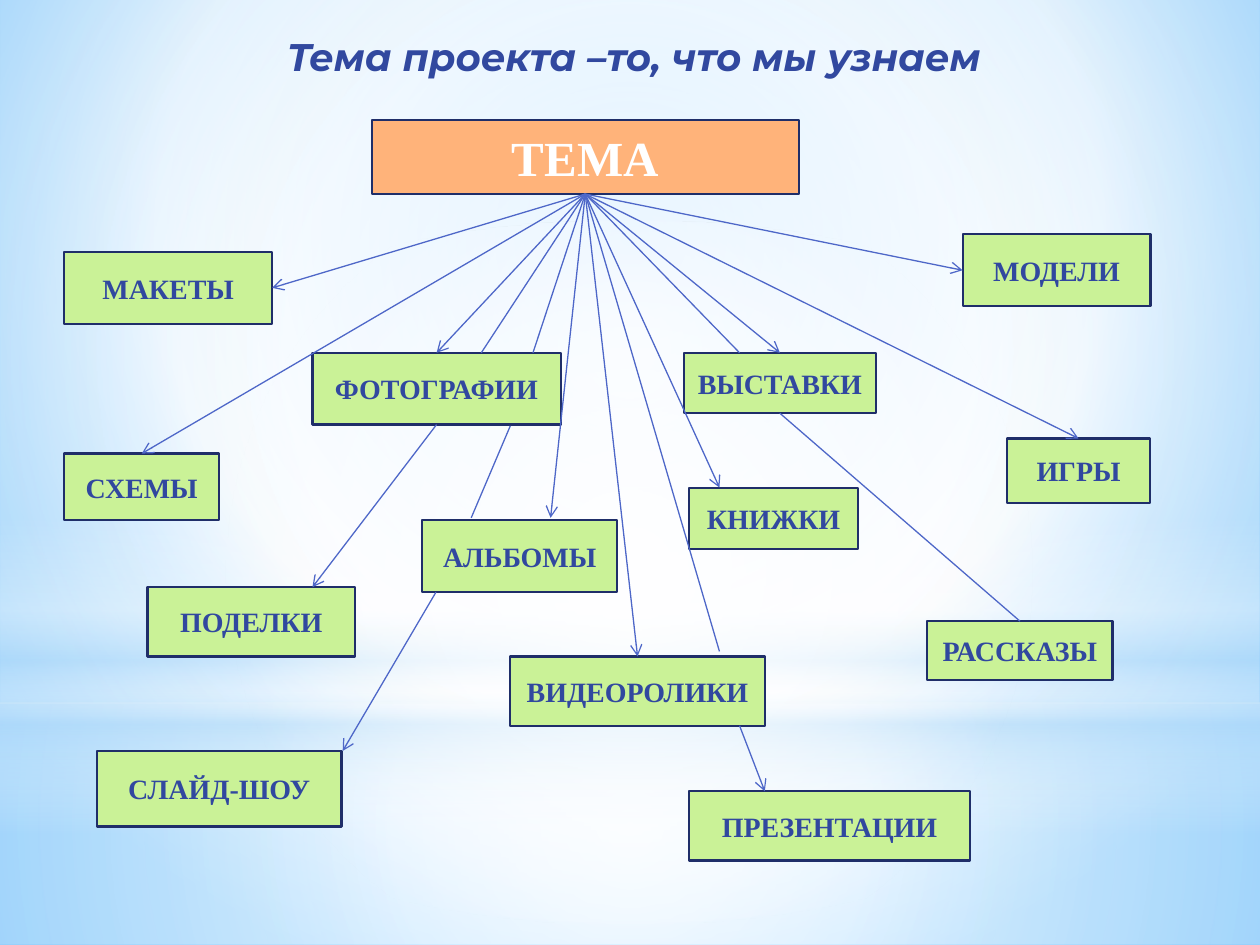
from lxml.etree import SubElement
from pptx import Presentation
from pptx.dml.color import RGBColor
from pptx.enum.shapes import MSO_CONNECTOR as Connector, MSO_SHAPE as Shape
from pptx.enum.text import MSO_ANCHOR as Anchor, PP_ALIGN as Align
from pptx.oxml.ns import qn
from pptx.util import Emu, Inches, Pt

WIDTH, HEIGHT = 10, 7.5
TOP, LEFT, BOTTOM, RIGHT = range(4)
BLUE, NAVY, LINE = "31489F", "1F2E69", "4E67C8"
ORANGE, GREEN, WHITE = "FFB37A", "CAF297", "FFFFFF"
SKY = "B4DCFA"
SERIF = "Times New Roman"
CENTER = (50, 50, 50, 50)

TITLE = "Тема проекта –то, что мы узнаем"
THEME = "ТЕМА"

# Gradient stops: position %, colour, opacity %
BACKGROUND = [(0, "9ED5FF", 100), (60, WHITE, 100), (100, "5BB9FF", 100)]
BACKDROP = [  # preset, left, top, width, height, stops, focus (None = vertical)
    (Shape.RECTANGLE, 0, 5.58, WIDTH, 1.92,
     [(0, WHITE, 91), (37, WHITE, 76), (100, SKY, 79)], CENTER),
    (Shape.RECTANGLE, 0, 0, WIDTH, 5.58,
     [(0, WHITE, 89), (48, WHITE, 62), (100, SKY, 79)], CENTER),
    (Shape.RECTANGLE, 0, 4.12, WIDTH, 2.5,
     [(0, WHITE, 0), (29, WHITE, 30), (45, SKY, 40),
      (55, WHITE, 26), (65, SKY, 60), (100, WHITE, 0)], None),
    (Shape.OVAL, 0, 1.75, WIDTH, 5.58, [(0, WHITE, 100), (56, WHITE, 0)], CENTER),
]

# Name: left, top, width, height
BOXES = {
    THEME: (2.95, 0.95, 3.39, 0.59),
    "МАКЕТЫ": (0.51, 2, 1.65, 0.57),
    "ПОДЕЛКИ": (1.17, 4.66, 1.65, 0.55),
    "ФОТОГРАФИИ": (2.48, 2.8, 1.97, 0.57),
    "СХЕМЫ": (0.51, 3.6, 1.23, 0.53),
    "АЛЬБОМЫ": (3.35, 4.13, 1.55, 0.57),
    "СЛАЙД-ШОУ": (0.77, 5.96, 1.94, 0.6),
    "ВЫСТАВКИ": (5.43, 2.8, 1.52, 0.48),
    "МОДЕЛИ": (7.64, 1.86, 1.49, 0.57),
    "ИГРЫ": (7.99, 3.48, 1.14, 0.51),
    "КНИЖКИ": (5.47, 3.87, 1.34, 0.49),
    "РАССКАЗЫ": (7.36, 4.93, 1.47, 0.47),
    "ВИДЕОРОЛИКИ": (4.05, 5.21, 2.02, 0.55),
    "ПРЕЗЕНТАЦИИ": (5.47, 6.28, 2.23, 0.55),
}

# An end is (box name, side) or a free point (x, y); then whether it has an arrowhead
HUB = (THEME, BOTTOM)
LINKS = [
    (HUB, ("ВЫСТАВКИ", TOP), True),
    (HUB, ("ФОТОГРАФИИ", TOP), True),
    (HUB, ("МОДЕЛИ", LEFT), True),
    (HUB, ("МАКЕТЫ", RIGHT), True),
    (HUB, (4.37, 4.11), True),
    (HUB, ("ВИДЕОРОЛИКИ", TOP), True),
    (HUB, (5.71, 3.87), True),
    (HUB, ("ИГРЫ", TOP), True),
    (HUB, (5.87, 2.8), False),
    (("ВЫСТАВКИ", BOTTOM), ("РАССКАЗЫ", TOP), False),
    (HUB, ("СХЕМЫ", TOP), True),
    (HUB, (3.82, 2.8), False),
    (("ФОТОГРАФИИ", BOTTOM), (2.48, 4.66), True),
    (HUB, (4.23, 2.8), False),
    ((4.05, 3.38), (3.74, 4.11), False),
    ((3.46, 4.7), (2.72, 5.96), True),
    (HUB, (5.71, 5.17), False),
    ((5.87, 5.76), (6.07, 6.28), True),
]


def color(value):
    return RGBColor.from_string(value)


def write(shape, text, *, size, font, fill, italic=False):
    frame = shape.text_frame
    frame.word_wrap = True
    paragraph = frame.paragraphs[0]
    paragraph.alignment = Align.CENTER
    run = paragraph.add_run()
    run.text = text
    run.font.size, run.font.name = Pt(size), font
    run.font.bold, run.font.italic = True, italic
    run.font.color.rgb = color(fill)
    return paragraph


def set_gradient(parent, stops, focus):
    """Swap the solid fill inside parent for a radial or vertical gradient."""
    solid = parent.find(qn("a:solidFill"))
    gradient = SubElement(parent, qn("a:gradFill"), rotWithShape="1")
    parent.replace(solid, gradient)
    stop_list = SubElement(gradient, qn("a:gsLst"))
    for position, value, opacity in stops:
        stop = SubElement(stop_list, qn("a:gs"), pos=str(position * 1000))
        tint = SubElement(stop, qn("a:srgbClr"), val=value)
        if opacity < 100:
            SubElement(tint, qn("a:alpha"), val=str(opacity * 1000))
    if focus:
        path = SubElement(gradient, qn("a:path"), path="circle")
        SubElement(path, qn("a:fillToRect"),
                   {side: str(share * 1000) for side, share in zip("ltrb", focus)})
    else:
        SubElement(gradient, qn("a:lin"), ang=str(90 * 60000), scaled="0")


def add_shape(slide, preset, left, top, width, height, fill, outline=None):
    shape = slide.shapes.add_shape(
        preset, Inches(left), Inches(top), Inches(width), Inches(height))
    shape.shadow.inherit = False
    shape.fill.solid()
    shape.fill.fore_color.rgb = color(fill)
    if outline:
        shape.line.color.rgb = color(outline)
        shape.line.width = Pt(1.25)
    else:
        shape.line.fill.background()
    return shape


def add_link(slide, boxes, start, end, arrow):
    def is_joined(place):
        return place[0] in boxes

    points = [(0, 0) if is_joined(place) else place for place in (start, end)]
    link = slide.shapes.add_connector(
        Connector.STRAIGHT, *(Inches(value) for point in points for value in point))
    if is_joined(start):
        link.begin_connect(boxes[start[0]], start[1])
    if is_joined(end):
        link.end_connect(boxes[end[0]], end[1])
    link.line.color.rgb = color(LINE)
    link.line.width = Pt(0.75)
    properties = link.element.spPr
    if arrow:
        SubElement(properties.find(qn("a:ln")), qn("a:tailEnd"), type="arrow")
    SubElement(properties, qn("a:effectLst"))


def main():
    presentation = Presentation()
    presentation.slide_width, presentation.slide_height = Inches(WIDTH), Inches(HEIGHT)
    slide = presentation.slides.add_slide(presentation.slide_layouts[6])

    # Background and soft light bands
    slide.background.fill.solid()
    slide.background.fill.fore_color.rgb = color(WHITE)
    set_gradient(next(slide.element.iter(qn("p:bgPr"))), BACKGROUND, (20, 10, 20, 60))
    for preset, left, top, width, height, stops, focus in BACKDROP:
        band = add_shape(slide, preset, left, top, width, height, WHITE)
        set_gradient(band.element.spPr, stops, focus)

    # Title
    title = slide.shapes.add_textbox(
        Inches(0.28), Inches(0.21), Inches(9.45), Inches(0.6))
    paragraph = write(title, TITLE, size=22, font="Montserrat", fill=BLUE, italic=True)
    paragraph.space_after = Pt(3)
    paragraph._p.get_or_add_pPr().set("marL", str(Emu(Inches(0.05))))

    # Theme and its forms
    boxes = {}
    for name, place in BOXES.items():
        is_theme = name == THEME
        box = add_shape(slide, Shape.FLOWCHART_PROCESS, *place,
                        ORANGE if is_theme else GREEN, NAVY)
        box.text_frame.vertical_anchor = Anchor.MIDDLE
        write(box, name, size=28 if is_theme else 16, font=SERIF,
              fill=WHITE if is_theme else BLUE)
        boxes[name] = box

    # Links
    for start, end, arrow in LINKS:
        add_link(slide, boxes, start, end, arrow)

    presentation.save("out.pptx")


if __name__ == "__main__":
    main()
